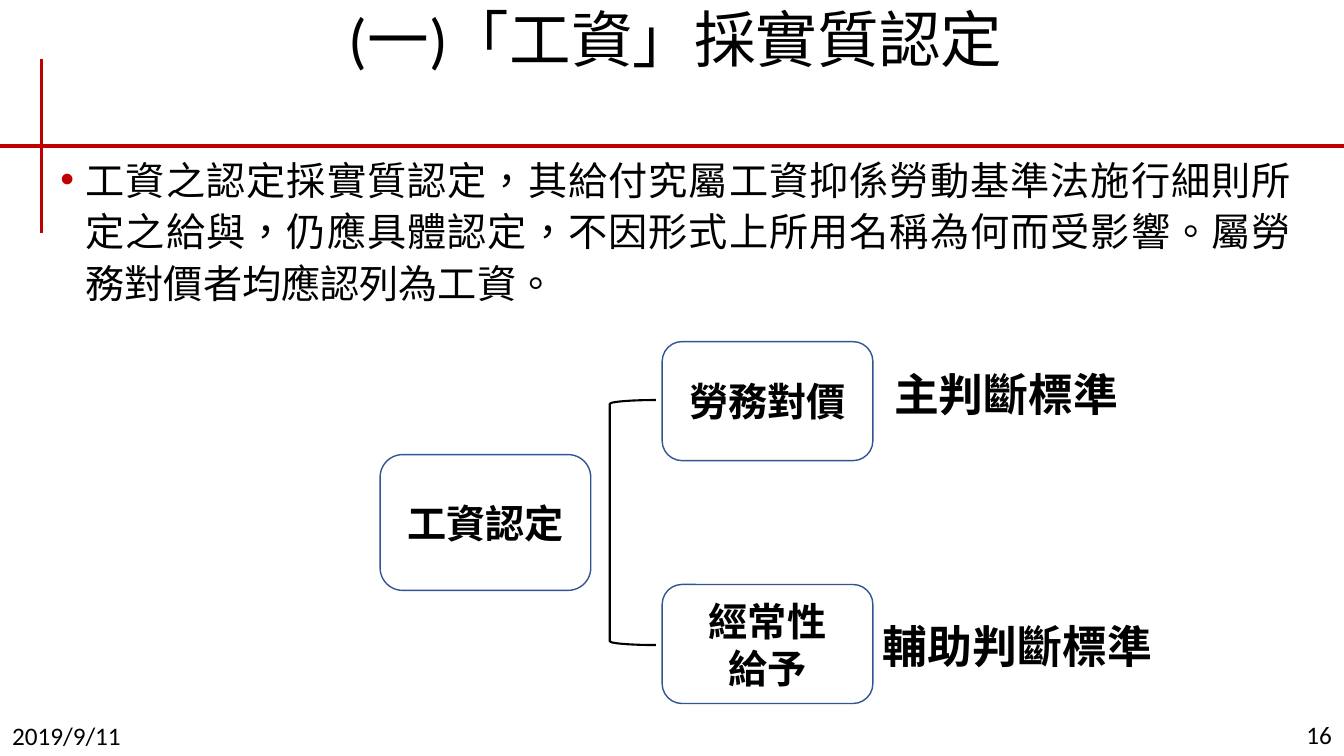
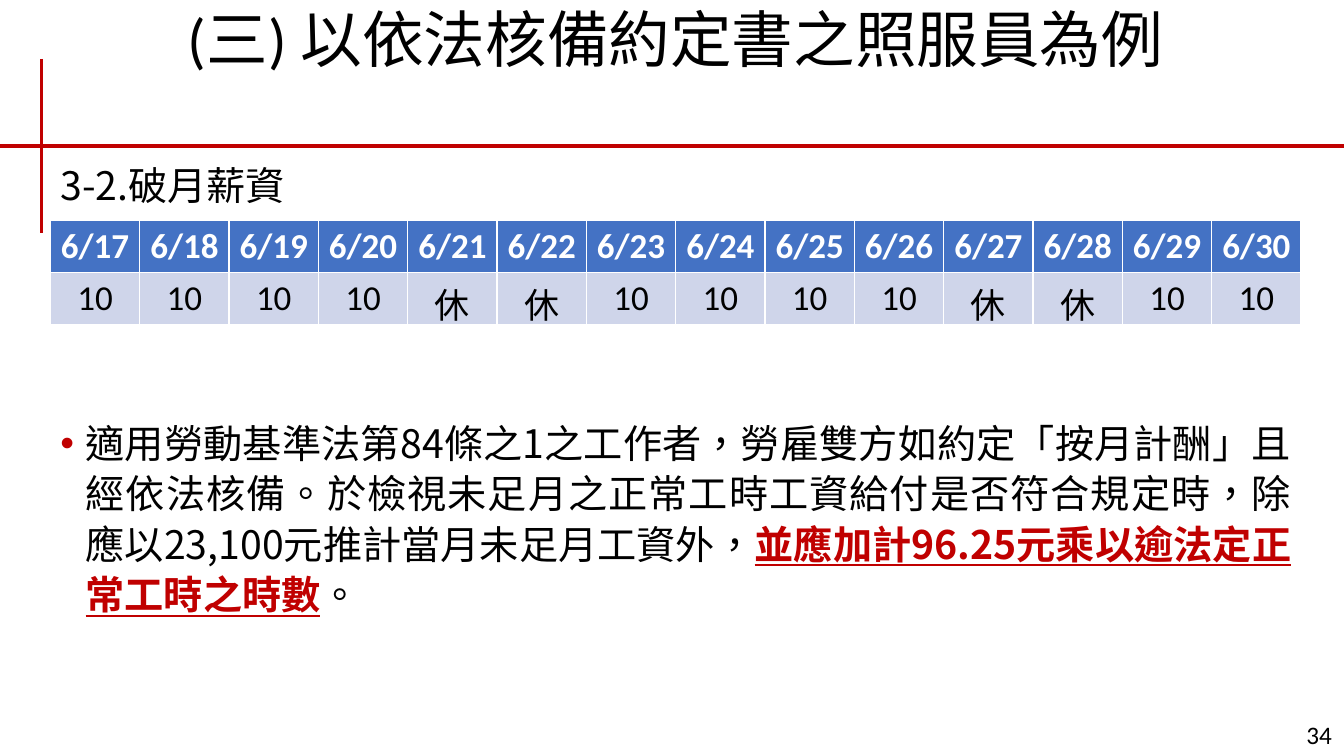
"""Build two slides on how wages are determined and worked out for part of a month."""
import lxml.etree
import pptx
import pptx.dml.color
import pptx.enum.dml
import pptx.enum.lang
import pptx.enum.shapes
import pptx.enum.text
import pptx.oxml
import pptx.oxml.ns
import pptx.util

Pt = pptx.util.Pt
ALIGN = pptx.enum.text.PP_ALIGN
ANCHOR = pptx.enum.text.MSO_ANCHOR
SHAPE = pptx.enum.shapes.MSO_SHAPE
COLORS = {
    "accent": "C00000",
    "ink": "000000",
    "paper": "FFFFFF",
    "node_edge": "325491",
    "header": "4472C4",
    "hours": "CFD5EA",
}
CJK_FONT = "Noto Sans CJK SC"
TITLE_BOX = (36, 3, 893.5, 98)
DATE_BOX = (1.5, 511, 215, 24.5)
NUMBER_BOX = (816.5, 510.5, 142, 26)
RULES = ((0, 104.4, 960, 104.4), (29.5, 42, 29.5, 166.5))

TITLE_TEXT = {"size": Pt(44), "name": "Calibri"}
BODY_TEXT = {"size": Pt(28), "name": CJK_FONT}
FOOTER_TEXT = {"size": Pt(18), "name": "Calibri"}
NODE_TEXT = {"size": Pt(28), "name": "Calibri", "bold": True}
LABEL_TEXT = {"size": Pt(32), "name": "Arial", "bold": True}
HOURS_TEXT = {"size": Pt(25), "name": "Calibri", "bold": False}
HEADER_TEXT = {**HOURS_TEXT, "bold": True}
EMPHASIS_TEXT = {**BODY_TEXT, "bold": True, "underline": True}


def rgb(color):
    """Return the named colour."""
    return pptx.dml.color.RGBColor.from_string(COLORS[color])


def apply(target, values):
    """Set each attribute of the target from a dict of values."""
    for attribute, value in values.items():
        setattr(target, attribute, value)


def place(part, box):
    """Move a part to its box, in points."""
    apply(part, dict(zip(("left", "top", "width", "height"), map(Pt, box))))


def write(paragraph, text, style, color="ink"):
    """Add a run of Traditional Chinese text in the given style."""
    run = paragraph.add_run()
    run.text = text
    apply(run.font, style)
    run.font.language_id = pptx.enum.lang.MSO_LANGUAGE_ID.TRADITIONAL_CHINESE
    run.font.color.rgb = rgb(color)
    east_asian = lxml.etree.SubElement(
        run._r.get_or_add_rPr(), pptx.oxml.ns.qn("a:ea"))
    east_asian.set("typeface", CJK_FONT)


def set_bullet(paragraph, bulleted):
    """Give a paragraph a red hanging bullet, or none."""
    properties = paragraph._p.get_or_add_pPr()
    indent = Pt(18) if bulleted else 0
    properties.set("marL", str(indent))
    properties.set("indent", str(-indent))
    marks = ["<a:buNone %s/>"]
    if bulleted:
        marks = [
            '<a:buClr %s><a:srgbClr val="' + COLORS["accent"] + '"/></a:buClr>',
            '<a:buFont %s typeface="Arial"/>',
            '<a:buChar %s char="•"/>',
        ]
    for mark in marks:
        properties.append(pptx.oxml.parse_xml(mark % pptx.oxml.ns.nsdecls("a")))


def add_label(slide, box, text, style, paragraph_format, inset=7.2):
    """Add a line of text in a box of its own."""
    label = slide.shapes.add_textbox(*map(Pt, box))
    apply(label.text_frame, {"word_wrap": True, "margin_left": Pt(inset)})
    paragraph = label.text_frame.paragraphs[0]
    apply(paragraph, paragraph_format)
    write(paragraph, text, style)


def add_rules(slide, layout):
    """Put the crossing red rules on the shared layout."""
    for ends in RULES:
        rule = slide.shapes.add_connector(
            pptx.enum.shapes.MSO_CONNECTOR.STRAIGHT, *map(Pt, ends))
        rule.line.width = Pt(2.5)
        rule.line.color.rgb = rgb("accent")
        lxml.etree.SubElement(
            rule.element.spPr, pptx.oxml.ns.qn("a:effectLst"))
        layout.shapes.element.append(rule.element)


def add_titled_slide(deck, title, number, date=None):
    """Add a slide with its title and footer."""
    slide = deck.slides.add_slide(deck.slide_layouts[1])
    heading = slide.shapes.title
    place(heading, TITLE_BOX)
    apply(heading.text_frame, {
        "vertical_anchor": ANCHOR.TOP,
        "auto_size": pptx.enum.text.MSO_AUTO_SIZE.NONE,
    })
    paragraph = heading.text_frame.paragraphs[0]
    apply(paragraph, {"alignment": ALIGN.CENTER, "line_spacing": 0.9})
    write(paragraph, title, TITLE_TEXT)
    add_label(slide, NUMBER_BOX, number, FOOTER_TEXT,
              {"alignment": ALIGN.RIGHT})
    if date:
        add_label(slide, DATE_BOX, date, FOOTER_TEXT, {})
    return slide


def fill_body(slide, box, line_height, points):
    """Write (bulleted, space before, runs) points in the body placeholder."""
    body = slide.placeholders[1]
    place(body, box)
    frame = body.text_frame
    frame.auto_size = pptx.enum.text.MSO_AUTO_SIZE.NONE
    for index, (bulleted, space, runs) in enumerate(points):
        paragraph = frame.add_paragraph() if index else frame.paragraphs[0]
        apply(paragraph, {
            "alignment": ALIGN.JUSTIFY,
            "line_spacing": Pt(line_height),
            "space_before": Pt(space),
        })
        set_bullet(paragraph, bulleted)
        for run in runs:
            write(paragraph, *run)


def add_outline(slide, preset, box, color, width):
    """Add an unfilled shape with a thin outline."""
    outline = slide.shapes.add_shape(preset, *map(Pt, box))
    outline.shadow.inherit = False
    outline.fill.background()
    outline.line.color.rgb = rgb(color)
    outline.line.width = Pt(width)
    return outline


def add_node(slide, box, lines):
    """Add a rounded node with centred lines of text."""
    node = add_outline(slide, SHAPE.ROUNDED_RECTANGLE, box, "node_edge", 1)
    frame = node.text_frame
    apply(frame, {"word_wrap": True, "vertical_anchor": ANCHOR.MIDDLE})
    for index, line in enumerate(lines):
        paragraph = frame.add_paragraph() if index else frame.paragraphs[0]
        paragraph.alignment = ALIGN.CENTER
        write(paragraph, line, NODE_TEXT)


def add_criteria_tree(slide, box, root, criteria):
    """Draw the root node, a bracket and the labelled criteria."""
    left, top, width, height = box
    middle = top + height / 2
    node_width, root_height, criterion_height = 150.5, 97, 85
    bracket_height = 175
    add_node(slide, (left, middle - root_height / 2, node_width, root_height),
             [root])
    bracket = add_outline(
        slide, SHAPE.RIGHT_BRACKET,
        (left + 164, middle - bracket_height / 2, 33, bracket_height),
        "ink", 1.5)
    bracket.rotation = 180
    step = (height - criterion_height) / (len(criteria) - 1)
    for index, (lines, role, (shift, drop)) in enumerate(criteria):
        y = top + index * step
        add_node(slide, (left + width - node_width, y, node_width,
                         criterion_height), lines)
        add_label(slide, (left + width + shift, y + drop, 253, 39.5), role,
                  LABEL_TEXT, {"line_spacing": Pt(32)}, inset=43.2)


def add_hours_table(slide, box, rows):
    """Add the table of dates and daily hours."""
    table = slide.shapes.add_table(
        len(rows), len(rows[0]), *map(Pt, box)).table
    looks = (("header", HEADER_TEXT, "paper"), ("hours", HOURS_TEXT, "ink"))
    for y, (values, (fill, style, color)) in enumerate(zip(rows, looks)):
        for x, value in enumerate(values):
            cell = table.cell(y, x)
            cell.fill.solid()
            cell.fill.fore_color.rgb = rgb(fill)
            paragraph = cell.text_frame.paragraphs[0]
            paragraph.alignment = ALIGN.CENTER
            write(paragraph, value, style, color)


def build_wage_test(deck):
    """Build the slide on the substantive test of wages."""
    slide = add_titled_slide(deck, "(一)「工資」採實質認定", "16", "2019/9/11")
    fill_body(slide, (36, 104.4, 893.5, 388), 37, [
        (True, 10, [(
            "工資之認定採實質認定，其給付究屬工資抑係勞動基準法施行細則所定之給與，"
            "仍應具體認定，不因形式上所用名稱為何而受影響。"
            "屬勞務對價者均應認列為工資。", BODY_TEXT)]),
    ])
    add_criteria_tree(slide, (271.5, 244, 352, 258.5), "工資認定", [
        (["勞務對價"], "主判斷標準", (-28, 21)),
        (["經常性", "給予"], "輔助判斷標準", (-36, 27.5)),
    ])
    return slide


def build_part_month(deck):
    """Build the slide on pay for part of a month."""
    slide = add_titled_slide(deck, "(三) 以依法核備約定書之照服員為例", "34")
    fill_body(slide, (36, 109.5, 893.5, 388), 36, [
        (False, 10, [("3-2.破月薪資", BODY_TEXT)]),
        (True, 148, [
            ("適用勞動基準法第84條之1之工作者，勞雇雙方如約定「按月計酬」且經依法核備。"
             "於檢視未足月之正常工時工資給付是否符合規定時，"
             "除應以23,100元推計當月未足月工資外，", BODY_TEXT),
            ("並應加計96.25元乘以逾法定正常工時之時數", EMPHASIS_TEXT, "accent"),
            ("。", BODY_TEXT),
        ]),
    ])
    days = range(17, 31)
    days_off = (21, 22, 27, 28)
    add_hours_table(slide, (36, 157.5, 893.5, 74), [
        [f"6/{day}" for day in days],
        ["休" if day in days_off else "10" for day in days],
    ])


def main():
    """Build and save the deck."""
    deck = pptx.Presentation()
    apply(deck, {"slide_width": Pt(960), "slide_height": Pt(540)})
    wage_test = build_wage_test(deck)
    add_rules(wage_test, deck.slide_layouts[1])
    build_part_month(deck)
    deck.save("out.pptx")


if __name__ == "__main__":
    main()
